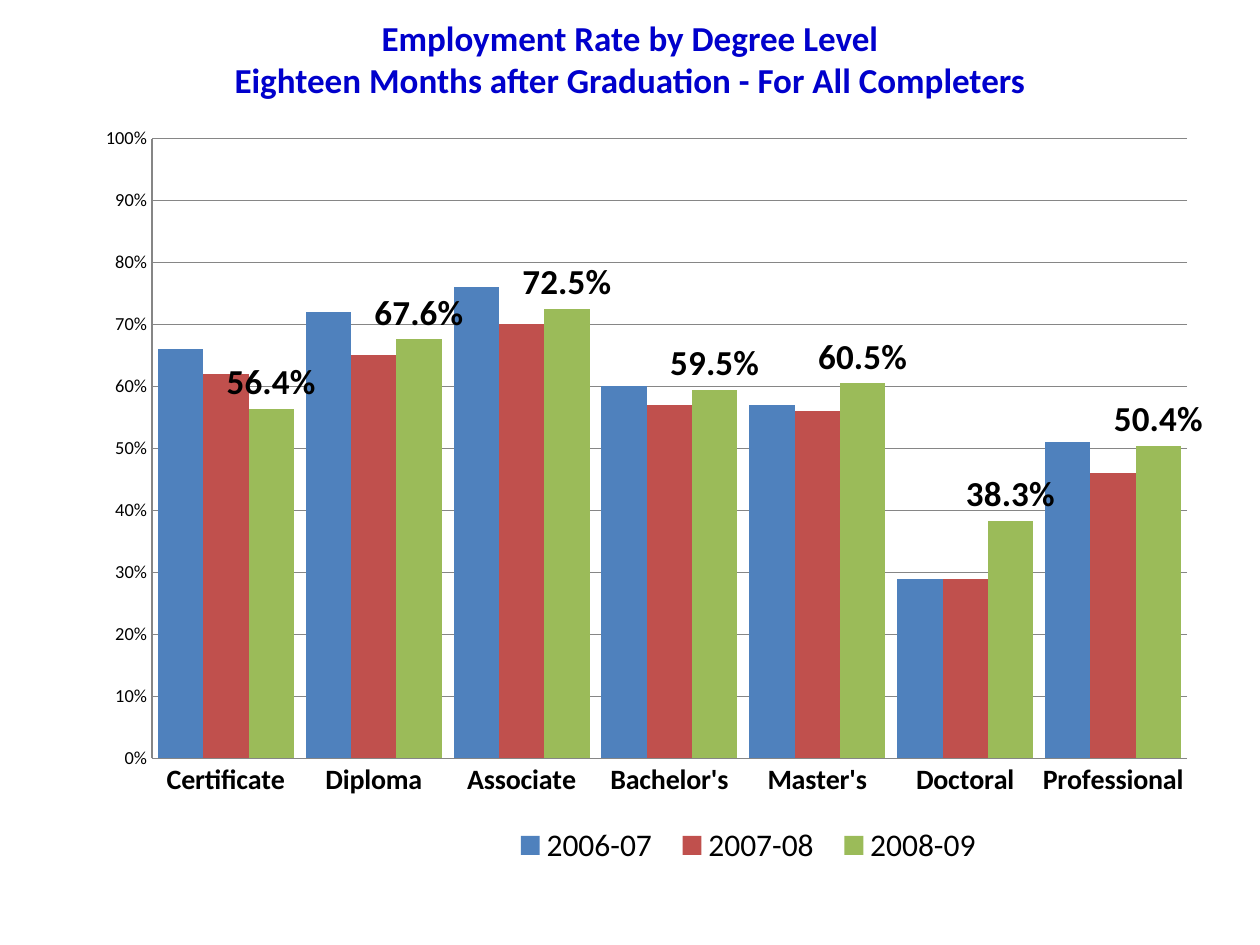
import dataclasses
import typing

import pptx
import pptx.chart.data
import pptx.dml.color
import pptx.enum.chart
import pptx.enum.text
import pptx.oxml
import pptx.oxml.ns
import pptx.util

Inches = pptx.util.Inches
Pt = pptx.util.Pt


@dataclasses.dataclass(frozen=True)
class Theme:
    font: str = "Calibri"
    title: str = "0000CC"
    text: str = "000000"
    grid: str = "868686"
    title_size: float = 20
    cat_size: float = 16
    value_size: float = 10.5
    legend_size: float = 18
    label_size: float = 20


@dataclasses.dataclass(frozen=True)
class Year:
    name: str
    rates: tuple[float, ...]
    color: str
    label: bool = False


THEME = Theme()
TITLE = (
    "Employment Rate by Degree Level",
    "Eighteen Months after Graduation - For All Completers",
)
DEGREES = ("Certificate", "Diploma", "Associate", "Bachelor's",
           "Master's", "Doctoral", "Professional")
YEARS = (
    Year("2006-07", (0.66, 0.72, 0.76, 0.6, 0.57, 0.29, 0.51), "4F81BD"),
    Year("2007-08", (0.62, 0.65, 0.7, 0.57, 0.56, 0.29, 0.46), "C0504D"),
    Year("2008-09", (0.564, 0.676, 0.725, 0.595, 0.605, 0.383, 0.504),
         "9BBB59", label=True),
)


def rgb(code: str) -> pptx.dml.color.RGBColor:
    return pptx.dml.color.RGBColor.from_string(code)


def set_font(font: typing.Any, size: float, bold: bool = False,
             color: str = THEME.text) -> None:
    font.name = THEME.font
    font.size = Pt(size)
    font.bold = bold
    font.color.rgb = rgb(color)


def set_line(line: typing.Any) -> None:
    line.color.rgb = rgb(THEME.grid)
    line.width = Pt(0.75)


def make_layout(x: float, y: float, w: float, h: float,
                inner: bool = False) -> typing.Any:
    """Return a manual chart layout in fractions of the chart's size."""
    target = '<c:layoutTarget val="inner"/>' if inner else ""
    return pptx.oxml.parse_xml(
        f'<c:layout {pptx.oxml.ns.nsdecls("c")}><c:manualLayout>{target}'
        '<c:xMode val="edge"/><c:yMode val="edge"/>'
        f'<c:x val="{x}"/><c:y val="{y}"/><c:w val="{w}"/><c:h val="{h}"/>'
        '</c:manualLayout></c:layout>')


def add_title(slide: typing.Any) -> None:
    box = slide.shapes.add_textbox(Inches(0.5), 0, Inches(9), Inches(1.25))
    frame = box.text_frame
    frame.word_wrap = True
    frame.vertical_anchor = pptx.enum.text.MSO_ANCHOR.TOP
    frame.margin_top = Inches(0.13)
    para = frame.paragraphs[0]
    para.alignment = pptx.enum.text.PP_ALIGN.CENTER
    for i, line in enumerate(TITLE):
        if i:
            para.add_line_break()
        run = para.add_run()
        run.text = line
        set_font(run.font, THEME.title_size, True, THEME.title)


def style_axes(chart: typing.Any) -> None:
    none = pptx.enum.chart.XL_TICK_MARK.NONE
    for axis in (chart.category_axis, chart.value_axis):
        axis.major_tick_mark = none
        axis.minor_tick_mark = none
        set_line(axis.format.line)
    set_font(chart.category_axis.tick_labels.font, THEME.cat_size, True)
    rate = chart.value_axis
    rate.minimum_scale = 0
    rate.maximum_scale = 1
    rate.major_unit = 0.1
    rate.has_major_gridlines = True
    set_line(rate.major_gridlines.format.line)
    rate.tick_labels.number_format = "0%"
    rate.tick_labels.number_format_is_linked = False
    set_font(rate.tick_labels.font, THEME.value_size)


def style_bars(plot: typing.Any) -> None:
    plot.gap_width = 26
    plot.overlap = 0
    plot.vary_by_categories = False
    for bars, year in zip(plot.series, YEARS):
        bars.format.fill.solid()
        bars.format.fill.fore_color.rgb = rgb(year.color)
        bars.invert_if_negative = False
        if year.label:
            labels = bars.data_labels
            labels.show_value = True
            labels.number_format = "0.0%"
            labels.number_format_is_linked = False
            labels.position = pptx.enum.chart.XL_LABEL_POSITION.OUTSIDE_END
            set_font(labels.font, THEME.label_size, True)


def style_legend(chart: typing.Any) -> None:
    chart.has_legend = True
    legend = chart.legend
    legend.position = pptx.enum.chart.XL_LEGEND_POSITION.BOTTOM
    legend.include_in_layout = False
    set_font(legend.font, THEME.legend_size)
    place = chart.element.find(".//" + pptx.oxml.ns.qn("c:legendPos"))
    for old in place.getparent().findall(pptx.oxml.ns.qn("c:layout")):
        place.getparent().remove(old)
    place.addnext(make_layout(0.37, 0.93, 0.44, 0.07))


def add_rates(slide: typing.Any) -> None:
    data = pptx.chart.data.CategoryChartData(number_format="0%")
    data.categories = DEGREES
    for year in YEARS:
        data.add_series(year.name, year.rates)
    chart = slide.shapes.add_chart(
        pptx.enum.chart.XL_CHART_TYPE.COLUMN_CLUSTERED,
        Inches(0.67), Inches(0.92), Inches(8.93), Inches(6), data).chart
    chart.has_title = False
    set_font(chart.font, 10)
    style_axes(chart)
    style_bars(chart.plots[0])
    style_legend(chart)
    area = chart.element.find(".//" + pptx.oxml.ns.qn("c:plotArea"))
    for old in area.findall(pptx.oxml.ns.qn("c:layout")):
        area.remove(old)
    area.insert(0, make_layout(0.06, 0.03, 0.92, 0.82, inner=True))


def main() -> None:
    deck = pptx.Presentation()
    deck.slide_width = Inches(10)
    deck.slide_height = Inches(7.5)
    slide = deck.slides.add_slide(deck.slide_layouts[6])
    add_title(slide)
    add_rates(slide)
    deck.save("out.pptx")


if __name__ == "__main__":
    main()
